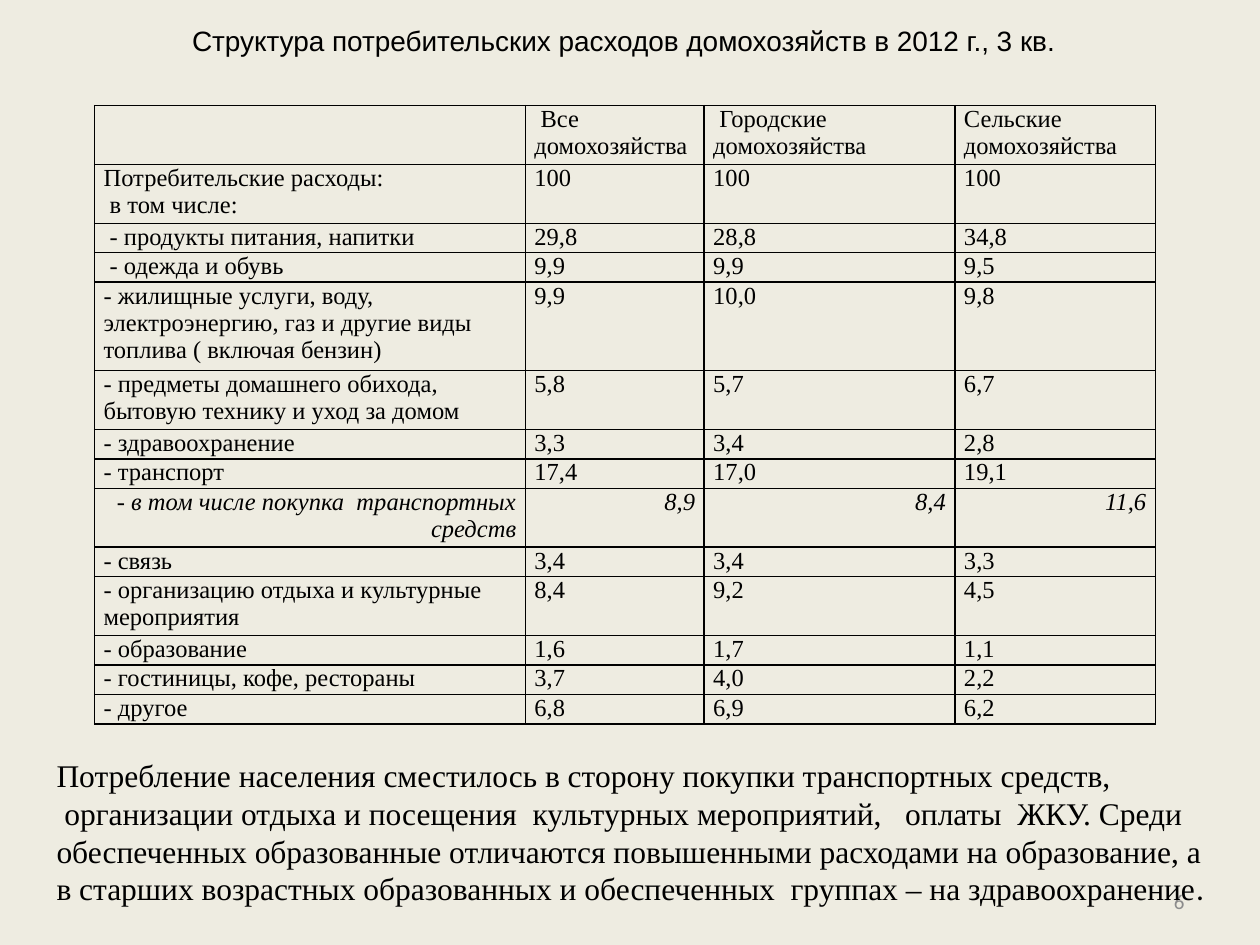
import pptx
import pptx.dml.color
import pptx.enum.text
import pptx.oxml
import pptx.oxml.ns
import pptx.util

Pt = pptx.util.Pt
ALIGN = pptx.enum.text.PP_ALIGN
ANCHOR = pptx.enum.text.MSO_ANCHOR
SERIF = "Times New Roman"
INK = "000000"
LINE_HEIGHT = 16.8
COLUMN_WIDTHS = [246.2, 102.2, 143.3, 114.5]
TRANSPORT_PURCHASE = "- в том числе покупка  транспортных средств"

# Each row: height in text lines, then its four cells.
EXPENSES = [
    (2, "", " Все домохозяйства", " Городские домохозяйства", "Сельские домохозяйства"),
    (2, "Потребительские расходы:\n в том числе:", "100", "100", "100"),
    (1, " - продукты питания, напитки", "29,8", "28,8", "34,8"),
    (1, " - одежда и обувь", "9,9", "9,9", "9,5"),
    (3, "- жилищные услуги, воду, электроэнергию, газ и другие виды топлива ( включая бензин)",
     "9,9", "10,0", "9,8"),
    (2, "- предметы домашнего обихода, бытовую технику и уход за домом", "5,8", "5,7", "6,7"),
    (1, "- здравоохранение", "3,3", "3,4", "2,8"),
    (1, "- транспорт", "17,4", "17,0", "19,1"),
    (2, TRANSPORT_PURCHASE, "8,9", "8,4", "11,6"),
    (1, "- связь", "3,4", "3,4", "3,3"),
    (2, "- организацию отдыха и культурные мероприятия", "8,4", "9,2", "4,5"),
    (1, "- образование", "1,6", "1,7", "1,1"),
    (1, "- гостиницы, кофе, рестораны", "3,7", "4,0", "2,2"),
    (1, "- другое", "6,8", "6,9", "6,2"),
]

CONCLUSION = (
    "Потребление населения сместилось в сторону покупки транспортных средств,\n"
    " организации отдыха и посещения  культурных мероприятий,   оплаты  ЖКУ. "
    "Среди обеспеченных образованные отличаются повышенными расходами на образование, "
    "а в старших возрастных образованных и обеспеченных  группах – на здравоохранение"
)


def color(hex_code):
    """Return the colour for a hex string."""
    return pptx.dml.color.RGBColor.from_string(hex_code)


def write(frame, text, size, font, ink=INK, align=ALIGN.LEFT, italic=False):
    """Fill a text frame with evenly styled paragraphs."""
    frame.text = text
    for paragraph in frame.paragraphs:
        paragraph.alignment = align
        paragraph.font.size = Pt(size)
        paragraph.font.name = font
        paragraph.font.italic = italic
        paragraph.font.color.rgb = color(ink)


def add_text(slide, box, text, size, font, anchor=ANCHOR.TOP, wrap=True, **style):
    """Add a text box in the given box and return its text frame."""
    frame = slide.shapes.add_textbox(*map(Pt, box)).text_frame
    frame.word_wrap = wrap
    frame.vertical_anchor = anchor
    write(frame, text, size, font, **style)
    return frame


def add_borders(cell):
    """Draw a thin line on all four sides of a cell."""
    properties = cell._tc.get_or_add_tcPr()
    for position, side in enumerate(("lnL", "lnR", "lnT", "lnB")):
        properties.insert(position, pptx.oxml.parse_xml(
            f'<a:{side} {pptx.oxml.ns.nsdecls("a")} w="{Pt(1)}">'
            f'<a:solidFill><a:srgbClr val="{INK}"/></a:solidFill></a:{side}>'))


def add_expense_table(slide, left, top):
    """Add the table of expense shares with its corner at left, top."""
    height = LINE_HEIGHT * sum(row[0] for row in EXPENSES)
    table = slide.shapes.add_table(
        len(EXPENSES), len(COLUMN_WIDTHS),
        Pt(left), Pt(top), Pt(sum(COLUMN_WIDTHS)), Pt(height)).table
    table.first_row = table.horz_banding = False
    for column, width in zip(table.columns, COLUMN_WIDTHS):
        column.width = Pt(width)
    for row, (lines, *texts) in zip(table.rows, EXPENSES):
        row.height = Pt(lines * LINE_HEIGHT)
        detail = texts[0] == TRANSPORT_PURCHASE
        for cell, text in zip(row.cells, texts):
            cell.margin_left = cell.margin_right = Pt(5.2)
            cell.margin_top = cell.margin_bottom = 0
            cell.fill.background()
            add_borders(cell)
            write(cell.text_frame, text, 14, SERIF, italic=detail,
                  align=ALIGN.RIGHT if detail else ALIGN.LEFT)


def add_conclusion(slide, box):
    """Add the closing remark, whose full stop has its own font."""
    remark = add_text(slide, box, CONCLUSION, 18, SERIF)
    full_stop = remark.paragraphs[-1].add_run()
    full_stop.text = "."
    full_stop.font.name = "Calibri"


def main():
    """Build the slide and save it."""
    deck = pptx.Presentation()
    deck.slide_width, deck.slide_height = Pt(720), Pt(540)
    slide = deck.slides.add_slide(deck.slide_layouts[6])
    slide.background.fill.solid()
    slide.background.fill.fore_color.rgb = color("EEECE1")
    add_text(slide, (516, 500.5, 168, 28.8), "6", 12, "Calibri",
             anchor=ANCHOR.MIDDLE, ink="8C8C8C", align=ALIGN.RIGHT)
    add_expense_table(slide, 54, 60.3)
    add_text(slide, (99, 9.7, 515, 46),
             "Структура потребительских расходов домохозяйств в 2012 г., 3 кв.",
             16, "Arial", wrap=False, align=ALIGN.CENTER)
    add_conclusion(slide, (25.2, 428.5, 680.4, 94.3))
    deck.save("out.pptx")


if __name__ == "__main__":
    main()
